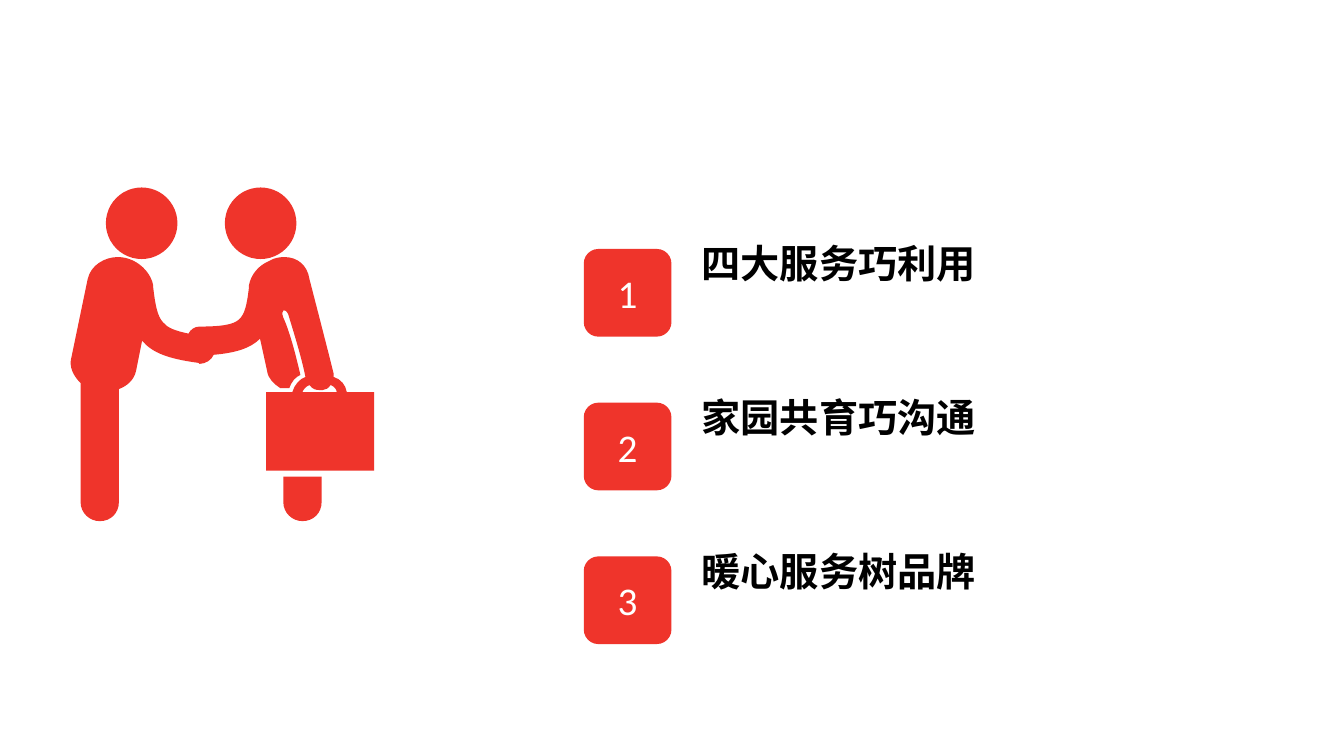
from lxml.etree import SubElement
from pptx import Presentation
from pptx.dml.color import RGBColor
from pptx.enum.shapes import MSO_SHAPE
from pptx.enum.text import MSO_ANCHOR, PP_ALIGN
from pptx.oxml.ns import qn
from pptx.util import Pt

# Content
TOPICS = ["四大服务巧利用", "家园共育巧沟通", "暖心服务树品牌"]

RED = RGBColor(0xEF, 0x34, 0x2B)
WHITE = RGBColor(0xFF, 0xFF, 0xFF)
BLACK = RGBColor(0x00, 0x00, 0x00)

# Layout in px, 100 to the inch
PX = 9144
SLIDE_SIZE = (1333, 750)
BADGE = (579, 247, 87, 87)
LABEL = (686, 233, 595, 110)
ROWS_SPAN = 305
HEADS = [(105, 186, 71, 71), (223, 186, 71, 71)]

# Outlines: a start point, then points for lines and 6 numbers for curves
LEG = [
    (281, 473), (281, 498), (281, 509, 290, 517, 300, 517),
    (311, 517, 319, 509, 319, 498), (319, 473),
]
BODIES = [
    (344, 389), (343, 382, 338, 376, 331, 374), (331, 373, 331, 372, 331, 371),
    (329, 362, 307, 277, 307, 277), (305, 263, 295, 255, 282, 255),
    (282, 255, 278, 255, 274, 256), (270, 257, 267, 259, 267, 259),
    (257, 263, 249, 272, 247, 283), (247, 284, 247, 284, 247, 285),
    (245, 302, 243, 312, 237, 317), (232, 322, 220, 324, 198, 324),
    (193, 324, 189, 327, 187, 331), (173, 328, 166, 325, 162, 320),
    (156, 314, 154, 302, 152, 285), (152, 284, 152, 284, 152, 283),
    (150, 272, 141, 263, 133, 259), (133, 259, 129, 257, 125, 256),
    (121, 255, 117, 255, 117, 255), (104, 255, 90, 263, 87, 277),
    (71, 354), (68, 364, 73, 373, 80, 380), (80, 498),
    (80, 509, 89, 517, 99, 517), (110, 517, 118, 509, 118, 498),
    (118, 386), (126, 383, 133, 377, 135, 368), (141, 338),
    (151, 350, 167, 356, 197, 360), (197, 360, 198, 361, 198, 361),
    (204, 361, 210, 357, 212, 352), (235, 350, 249, 345, 258, 336),
    (265, 368), (266, 376, 272, 381, 278, 385), (287, 385),
    (289, 379, 293, 374, 298, 372), (293, 350, 287, 328, 281, 315),
    (278, 307, 283, 305, 286, 312), (288, 319, 299, 353, 303, 374),
    (297, 376, 292, 382, 290, 389), (264, 389), (264, 467), (371, 467),
    (371, 389),
]
HANDLE_GAP = [
    (300, 389), (301, 386, 304, 383, 307, 382), (310, 386, 313, 387, 317, 387),
    (318, 387, 319, 387, 320, 387), (323, 387, 326, 385, 328, 382),
    (331, 383, 334, 386, 334, 389),
]


def to_emu(values):
    return [round(value * PX) for value in values]


def row_box(box, index):
    left, top, width, height = box
    offset = index * ROWS_SPAN / (len(TOPICS) - 1)
    return to_emu((left, top + offset, width, height))


def paint(shape):
    shape.shadow.inherit = False
    shape.fill.solid()
    shape.fill.fore_color.rgb = RED
    shape.line.fill.background()


def bend_curves(shape, segments):
    """Join each three lines that stand for a curve into one cubic curve."""
    lines = iter(list(shape.element.iter(qn("a:lnTo"))))
    for segment in segments:
        line = next(lines)
        if len(segment) == 2:
            continue
        path = line.getparent()
        curve = SubElement(path, qn("a:cubicBezTo"))
        path.replace(line, curve)
        curve.append(line[0])
        for _ in range(2):
            line = next(lines)
            curve.append(line[0])
            path.remove(line)


def add_outlines(shapes, *outlines):
    builder = None
    for start, *segments in outlines:
        if builder is None:
            builder = shapes.build_freeform(*to_emu(start))
        else:
            builder.move_to(*to_emu(start))
        points = [to_emu(segment[i:i + 2])
                  for segment in segments for i in range(0, len(segment), 2)]
        builder.add_line_segments(points, close=True)
    shape = builder.convert_to_shape()
    bend_curves(shape, [segment for outline in outlines for segment in outline[1:]])
    paint(shape)


def format_text(paragraph, font_name, color, bold):
    font = paragraph.runs[0].font
    font.name = font_name
    font.size = Pt(28)
    font.bold = bold
    font.color.rgb = color


def add_badge(slide, index):
    badge = slide.shapes.add_shape(
        MSO_SHAPE.ROUNDED_RECTANGLE, *row_box(BADGE, index))
    paint(badge)
    badge.text_frame.text = str(index + 1)
    badge.text_frame.vertical_anchor = MSO_ANCHOR.MIDDLE
    paragraph = badge.text_frame.paragraphs[0]
    paragraph.alignment = PP_ALIGN.CENTER
    format_text(paragraph, "Calibri", WHITE, False)


def add_label(slide, index):
    label = slide.shapes.add_textbox(*row_box(LABEL, index))
    label.text_frame.word_wrap = True
    label.text_frame.text = TOPICS[index]
    format_text(label.text_frame.paragraphs[0], "Arial", BLACK, True)


def main():
    presentation = Presentation()
    presentation.slide_width, presentation.slide_height = to_emu(SLIDE_SIZE)
    slide = presentation.slides.add_slide(presentation.slide_layouts[6])

    # Numbered badges, then topic labels
    for index in range(len(TOPICS)):
        add_badge(slide, index)
    for index in reversed(range(len(TOPICS))):
        add_label(slide, index)

    # Handshake figure
    handshake = slide.shapes.add_group_shape()
    for head in HEADS:
        paint(handshake.shapes.add_shape(MSO_SHAPE.OVAL, *to_emu(head)))
    add_outlines(handshake.shapes, LEG)
    add_outlines(handshake.shapes, BODIES, HANDLE_GAP)

    presentation.save("out.pptx")


if __name__ == "__main__":
    main()
